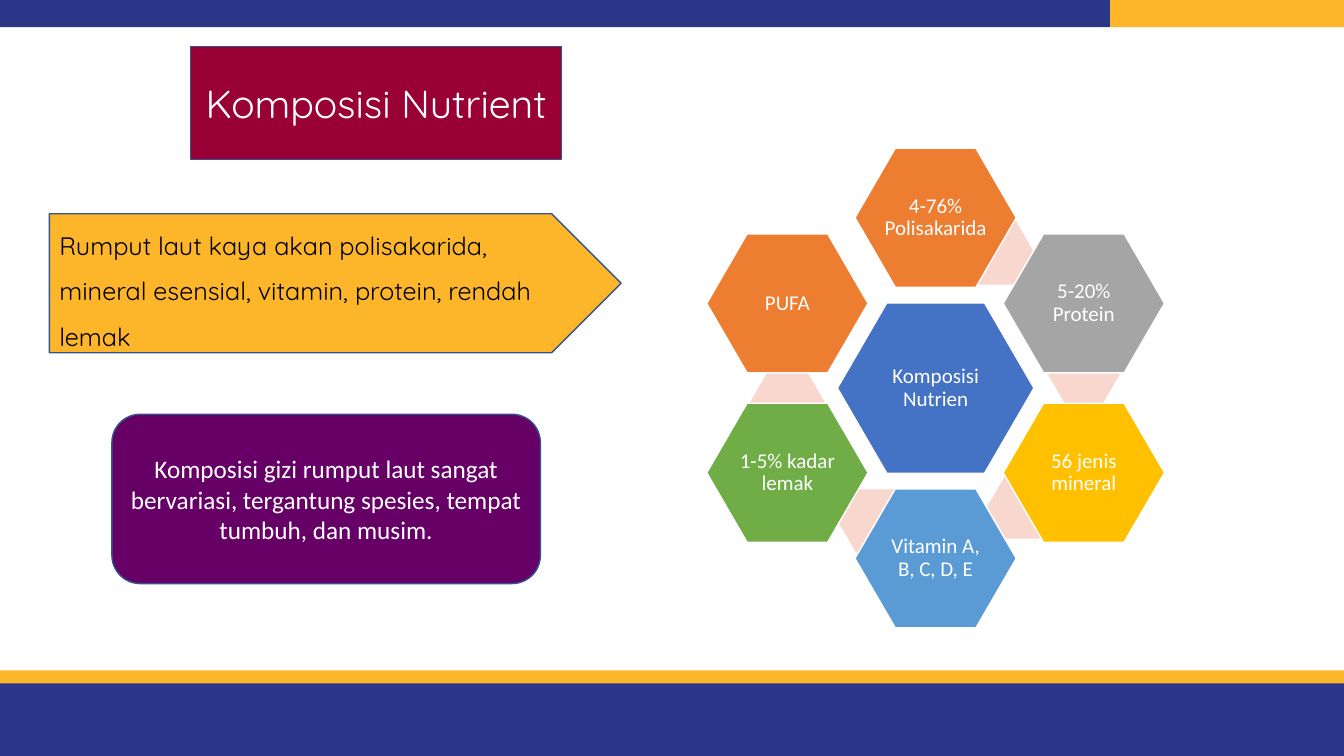
import dataclasses
import typing

import pptx
import pptx.dml.color
import pptx.enum.shapes
import pptx.enum.text
import pptx.shapes.autoshape
import pptx.slide
import pptx.util

Inches = pptx.util.Inches
Pt = pptx.util.Pt
SHAPE = pptx.enum.shapes.MSO_SHAPE
ALIGN = pptx.enum.text.PP_ALIGN

COLORS = {
    "navy": "2A3788",
    "amber": "FDB62A",
    "maroon": "990033",
    "purple": "660066",
    "outline": "325491",
    "white": "FFFFFF",
    "black": "000000",
    "blue": "4472C4",
    "orange": "ED7D31",
    "gray": "A5A5A5",
    "gold": "FFC000",
    "sky": "5B9BD5",
    "green": "70AD47",
    "link": "F8D7CE",
}


@dataclasses.dataclass(frozen=True)
class Label:
    text: str
    size: float
    font: str = "Calibri"
    color: str = "white"
    align: ALIGN = ALIGN.CENTER
    line_spacing: float = 1.0
    margin: typing.Optional[float] = None


@dataclasses.dataclass(frozen=True)
class Block:
    left: float
    top: float
    width: float
    height: float
    fill: str
    line: typing.Optional[str] = None
    preset: SHAPE = SHAPE.RECTANGLE
    adjustment: typing.Optional[float] = None
    label: typing.Optional[Label] = None


@dataclasses.dataclass(frozen=True)
class Nutrient:
    """An outer hexagon and the link behind it, both as offsets from the hub."""

    text: str
    fill: str
    offset: tuple[float, float]
    link_offset: typing.Optional[tuple[float, float]] = None


BARS = [
    Block(0, 0, 11.01, 0.27, "navy"),
    Block(11.01, 0, 2.32, 0.27, "amber"),
    Block(0, 6.76, 13.33, 0.74, "navy"),
    Block(0, 6.65, 13.33, 0.13, "amber"),
]
TEXT_BLOCKS = [
    Block(1.89, 0.46, 3.68, 1.12, "maroon", "outline",
          label=Label("Komposisi Nutrient", 28, "Quicksand")),
    Block(0.49, 2.12, 5.67, 1.38, "amber", "outline", SHAPE.PENTAGON,
          label=Label("Rumput laut kaya akan polisakarida, mineral esensial, "
                      "vitamin, protein, rendah lemak",
                      18, "Quicksand", "black", ALIGN.LEFT, 1.5)),
    Block(1.11, 4.11, 4.25, 1.68, "purple", "outline",
          SHAPE.FLOWCHART_ALTERNATE_PROCESS,
          label=Label("Komposisi gizi rumput laut sangat bervariasi, "
                      "tergantung spesies, tempat tumbuh, dan musim.", 18)),
]

HUB_CENTER = (9.28, 3.85)
HUB_SIZE = (1.95, 1.69)
NUTRIENT_SIZE = (1.6, 1.38)
LINK_SIZE = (0.74, 0.63)
SIDE, NEAR, FAR = 1.47, 0.84, 1.69
NUTRIENTS = [
    Nutrient("4-76% Polisakarida", "orange", (0, -FAR), (0.61, -1.34)),
    Nutrient("5-20% Protein", "gray", (SIDE, -NEAR), (SIDE, -0.16)),
    Nutrient("56 jenis mineral", "gold", (SIDE, NEAR), (0.88, 1.18)),
    Nutrient("Vitamin A, B, C, D, E", "sky", (0, FAR), (-0.6, 1.32)),
    Nutrient("1-5% kadar lemak", "green", (-SIDE, NEAR), (-SIDE, 0.14)),
    Nutrient("PUFA", "orange", (-SIDE, -NEAR)),
]


def rgb(name: str) -> pptx.dml.color.RGBColor:
    return pptx.dml.color.RGBColor.from_string(COLORS[name])


def set_attributes(target: object, values: dict[str, typing.Any]) -> None:
    for name, value in values.items():
        setattr(target, name, value)


def write_label(shape: pptx.shapes.autoshape.Shape, label: Label) -> None:
    frame = shape.text_frame
    frame_format = {
        "word_wrap": True,
        "vertical_anchor": pptx.enum.text.MSO_ANCHOR.MIDDLE,
    }
    if label.margin is not None:
        for side in ("left", "top", "right", "bottom"):
            frame_format[f"margin_{side}"] = Inches(label.margin)
    set_attributes(frame, frame_format)
    paragraph = frame.paragraphs[0]
    set_attributes(paragraph, {"alignment": label.align,
                               "line_spacing": label.line_spacing})
    run = paragraph.add_run()
    run.text = label.text
    set_attributes(run.font, {"name": label.font, "size": Pt(label.size)})
    run.font.color.rgb = rgb(label.color)


def draw_block(slide: pptx.slide.Slide, block: Block) -> None:
    shape = slide.shapes.add_shape(
        block.preset, Inches(block.left), Inches(block.top),
        Inches(block.width), Inches(block.height))
    shape.shadow.inherit = False
    if block.adjustment is not None:
        shape.adjustments[0] = block.adjustment
    shape.fill.solid()
    shape.fill.fore_color.rgb = rgb(block.fill)
    if block.line:
        shape.line.color.rgb = rgb(block.line)
        shape.line.width = Pt(1)
    else:
        shape.line.fill.background()
    if block.label:
        write_label(shape, block.label)


def hexagon(offset: tuple[float, float], size: tuple[float, float], fill: str,
            text: str = "") -> Block:
    """Return a hexagon centred at an offset from the hub; links have no text."""
    left, top = (center + shift - length / 2 for center, shift, length
                 in zip(HUB_CENTER, offset, size))
    label = Label(text, 15, line_spacing=0.9, margin=0.02) if text else None
    return Block(left, top, *size, fill, "white" if text else None,
                 SHAPE.HEXAGON, 0.29, label)


def draw_nutrient_wheel(slide: pptx.slide.Slide) -> None:
    draw_block(slide, hexagon((0, 0), HUB_SIZE, "blue", "Komposisi Nutrien"))
    for nutrient in NUTRIENTS:
        if nutrient.link_offset:
            draw_block(slide, hexagon(nutrient.link_offset, LINK_SIZE, "link"))
        draw_block(slide, hexagon(nutrient.offset, NUTRIENT_SIZE,
                                  nutrient.fill, nutrient.text))


def main() -> None:
    presentation = pptx.Presentation()
    set_attributes(presentation, {"slide_width": Inches(13.33),
                                  "slide_height": Inches(7.5)})
    slide = presentation.slides.add_slide(presentation.slide_layouts[6])
    for block in BARS + TEXT_BLOCKS:
        draw_block(slide, block)
    draw_nutrient_wheel(slide)
    presentation.save("out.pptx")


if __name__ == "__main__":
    main()
